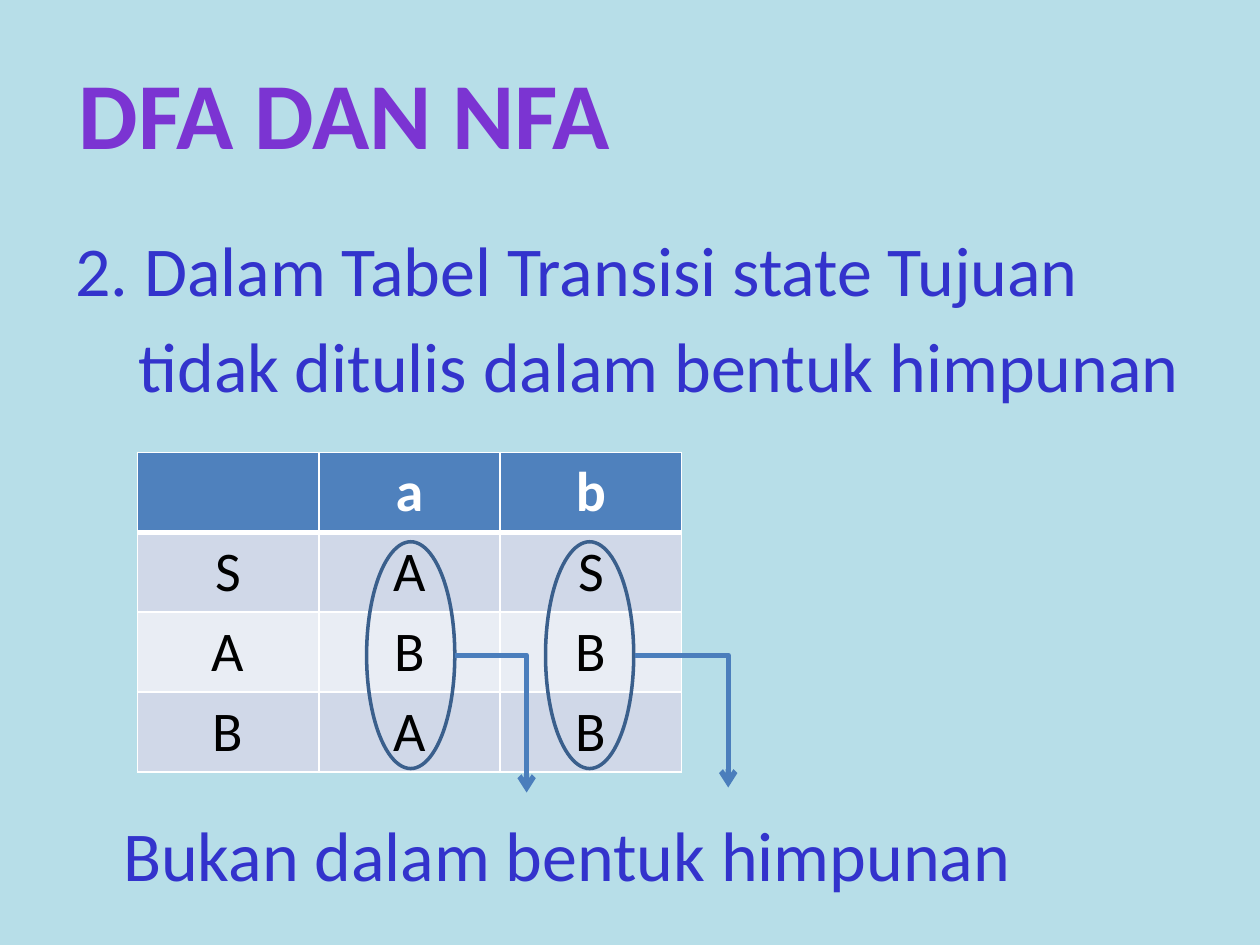
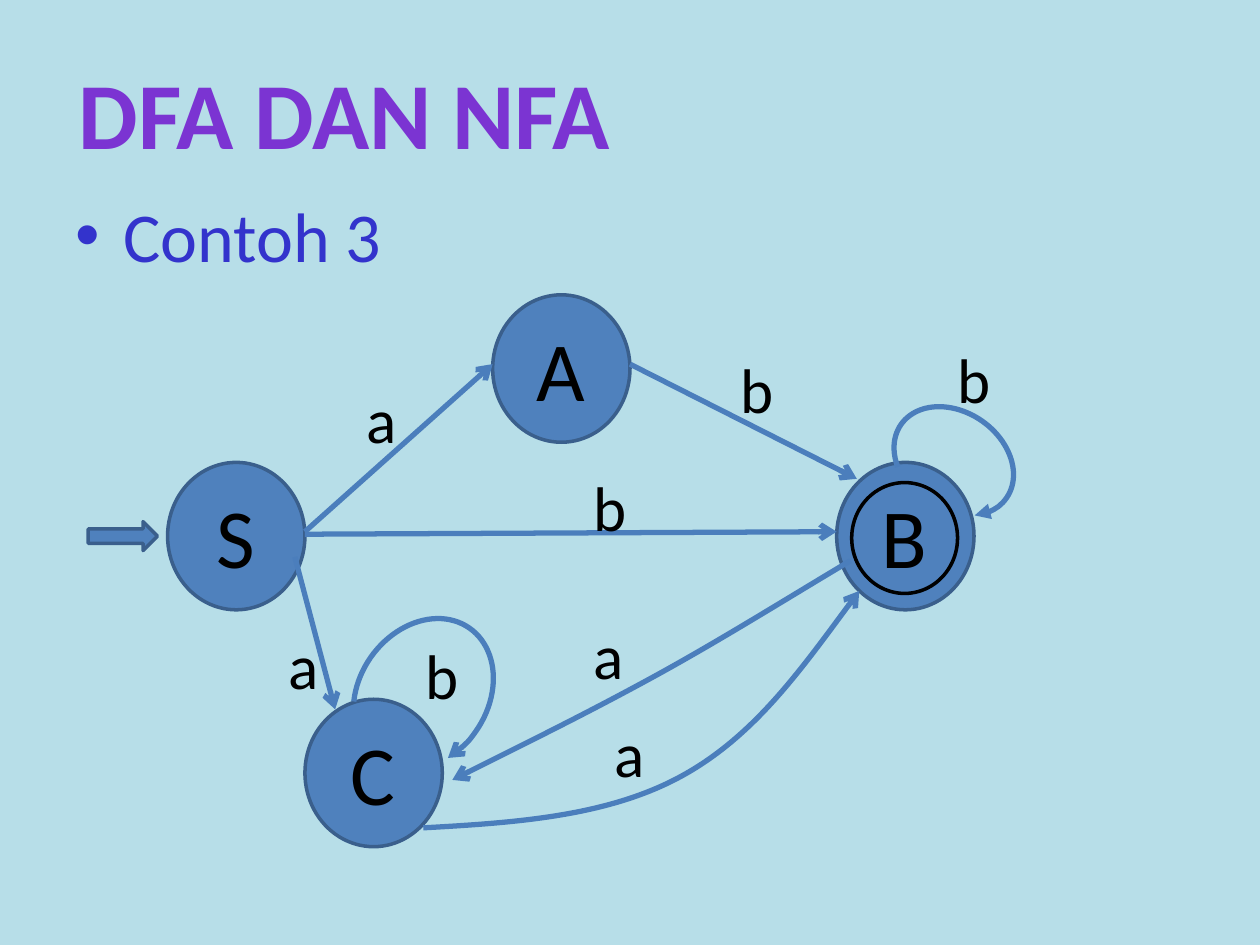
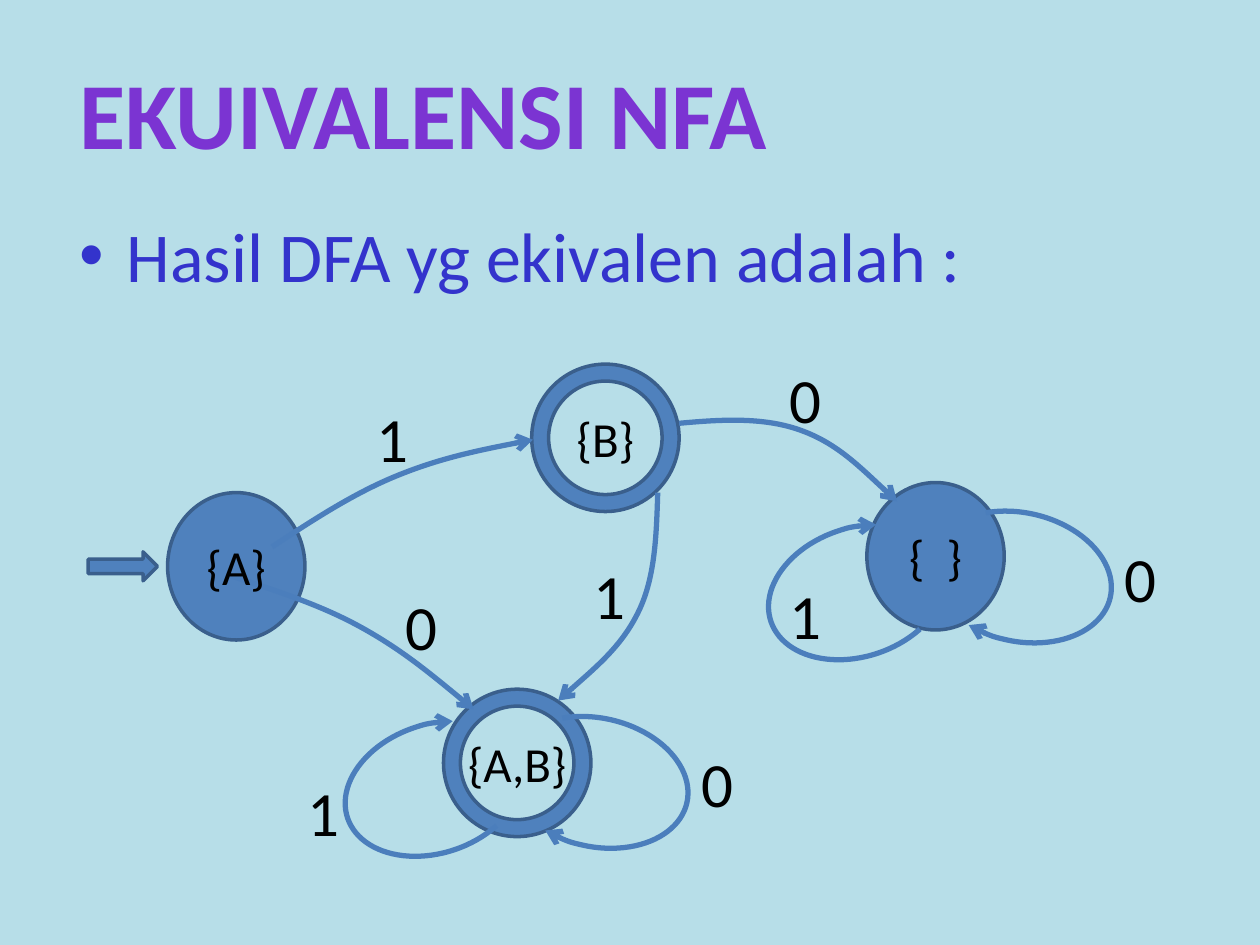
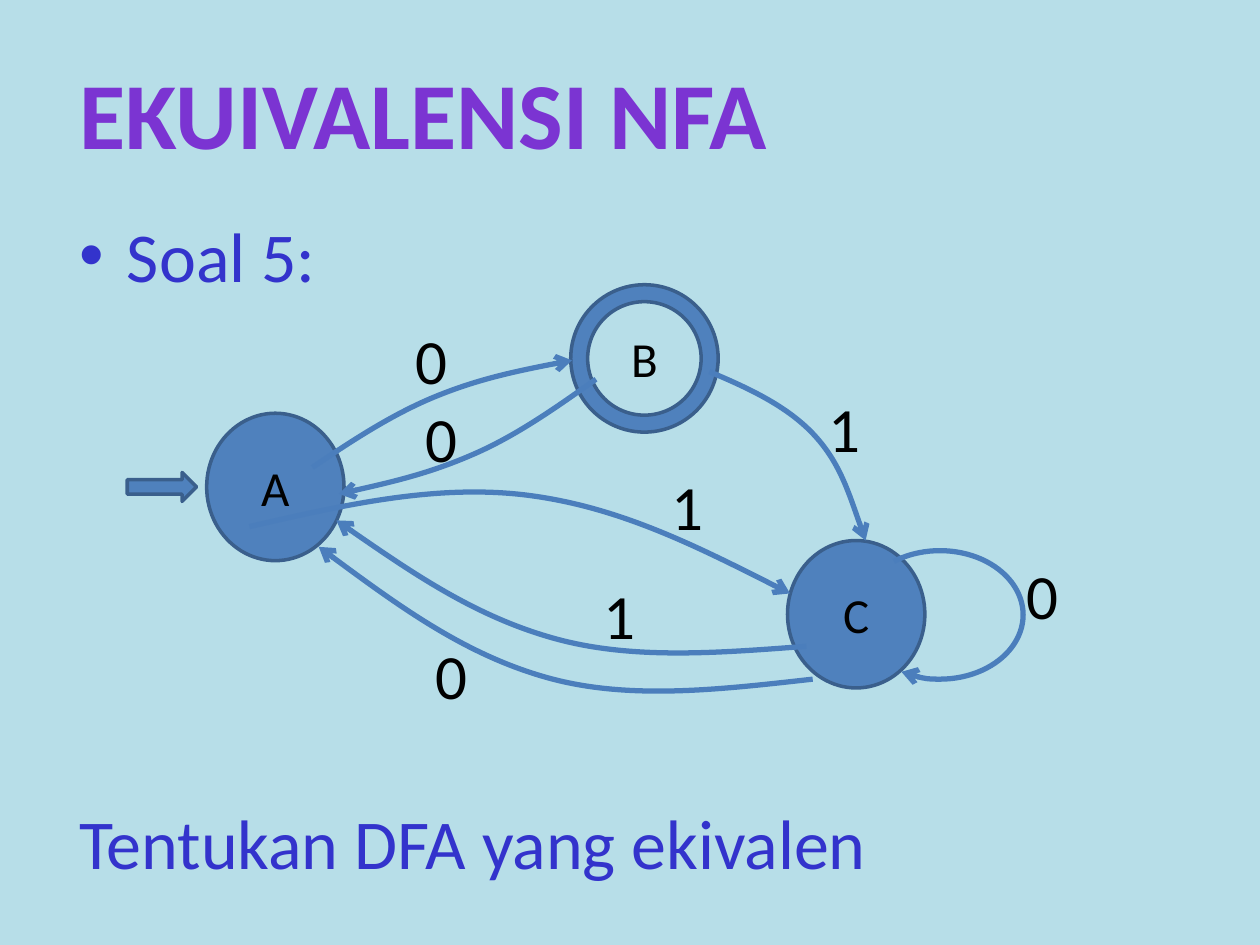
from lxml.etree import SubElement
from pptx import Presentation
from pptx.dml.color import RGBColor
from pptx.enum.shapes import MSO_CONNECTOR, MSO_SHAPE
from pptx.enum.text import MSO_AUTO_SIZE, PP_ALIGN
from pptx.oxml import parse_xml
from pptx.oxml.ns import nsdecls, qn
from pptx.util import Pt

PX = 9144
FONT = "Calibri"
SKY, INDIGO, BLACK, WHITE = "B7DEE8", "3333CC", "000000", "FFFFFF"
BLUE, RIM, STROKE = "4F81BD", "3A5F8C", "4B7EBC"
BANDS = ["D0D8E8", "E9EDF4"]
TITLE_STOPS = [(0, "3D1B67"), (43, "7B34D2"), (48, "7330C4"), (100, "3D1B67")]
TITLE_EDGE = "5E457C"
HANG = 38
LABEL_SIZE = (55, 71)
CIRCLE, RING, ARROW = (109, 117), (117, 117), (55, 23)
ARC_ENDS = (137.545, 74.462)
LEFT_LOOP, RIGHT_LOOP = (145, 102, 161.3, "arrow"), (147, 102, 12.7, "arrow")


def colour(code):
    return RGBColor.from_string(code)


def write(frame, text, size=36, ink=BLACK, bold=False, align=PP_ALIGN.LEFT,
          margin=0, indent=0, bullet=None, before=0, title=False):
    para = frame.add_paragraph() if frame.text else frame.paragraphs[0]
    para.alignment = align
    if before:
        para.space_before = Pt(before)
    properties = para._p.get_or_add_pPr()
    properties.set("marL", str(margin * PX))
    properties.set("indent", str(indent * PX))
    if bullet:
        SubElement(properties, qn("a:buFont")).set("typeface", "Arial")
        SubElement(properties, qn("a:buChar")).set("char", bullet)
    span = para.add_run()
    span.text = text
    span.font.name = FONT
    span.font.size = Pt(size)
    span.font.bold = bold
    if not title:
        span.font.color.rgb = colour(ink)
        return
    stops = "".join(f'<a:gs pos="{place * 1000}"><a:srgbClr val="{code}"/></a:gs>'
                    for place, code in TITLE_STOPS)
    look = span._r.get_or_add_rPr()
    look.insert(0, parse_xml(
        f'<a:gradFill {nsdecls("a")}><a:gsLst>{stops}</a:gsLst>'
        '<a:lin ang="5400000" scaled="0"/></a:gradFill>'))
    look.insert(0, parse_xml(
        f'<a:ln {nsdecls("a")} w="9000"><a:solidFill>'
        f'<a:srgbClr val="{TITLE_EDGE}"/></a:solidFill></a:ln>'))


hanging = dict(margin=HANG, indent=-HANG)
bulleted = dict(hanging, bullet="•")
dfa, equivalence = ("DFA DAN NFA", 447), ("EKUIVALENSI NFA", 572)
big_state, small_state = (48, 78, 91), (28, 99, 57)

slides = [
    dict(
        title=dfa, body_at=(50, 175),
        body=[("2. Dalam Tabel Transisi state Tujuan", hanging),
              ("tidak ditulis dalam bentuk himpunan", dict(margin=50, before=7)),
              ("Bukan dalam bentuk himpunan", dict(margin=HANG, before=231))],
        table=["_ab", "SAS", "ABB", "BAB"],
        outlines=[((left, 430, 70, 180), RIM) for left in (291, 433)],
        elbows=[(504, 520, 578, 625), (361, 520, 418, 629)],
    ),
    dict(
        title=dfa, body_at=(50, 148), body=[("Contoh 3", bulleted)],
        state_text=big_state,
        circles=[("S", 133, 367), ("A", 391, 234), ("B", 664, 367), ("C", 242, 555)],
        outlines=[((676, 383, 84, 88), BLACK)],
        lines=[(242, 422, 391, 289), (242, 424, 664, 422),
               (234, 442, 266, 563), (500, 289, 680, 380)],
        curves=[[(675, 445), (519, 537), (359, 619)],
                [(336, 657), (539, 617), (682, 469)]],
        loops=[(718, 315, 78, 102, 304.8, "triangle"), (272, 500, 128, 102, 304.8, "arrow")],
        labels=[("a", 281, 297), ("a", 461, 484), ("a", 219, 492), ("b", 328, 500),
                ("b", 461, 367), ("b", 750, 265), ("a", 478, 562), ("b", 578, 273)],
    ),
    dict(
        title=equivalence, body_at=(53, 164),
        body=[("Hasil DFA yg ekivalen adalah :", bulleted)],
        state_text=small_state,
        circles=[("{A}", 133, 391), ("{  }", 688, 383)],
        rings=[("{A,B}", 352, 547), ("{B}", 422, 289)],
        curves=[[(522, 391), (507, 485), (443, 556)],
                [(216, 434), (314, 378), (423, 349)],
                [(180, 456), (285, 497), (376, 563)],
                [(539, 336), (634, 341), (712, 398)]],
        loops=[(272, 575, *LEFT_LOOP), (400, 570, *RIGHT_LOOP),
               (608, 419, *LEFT_LOOP), (736, 407, *RIGHT_LOOP)],
        labels=[("1", 289, 312), ("0", 312, 461), ("1", 461, 437), ("1", 234, 609),
                ("0", 547, 586), ("0", 617, 281), ("1", 617, 453), ("0", 883, 423)],
    ),
    dict(
        title=equivalence, body_at=(53, 164),
        body=[("Soal 5:", bulleted),
              ("Tentukan DFA yang ekivalen", dict(hanging, before=287))],
        state_text=small_state,
        circles=[("A", 164, 328), ("C", 625, 429)],
        rings=[("B", 453, 226)],
        curves=[[(248, 371), (345, 315), (454, 286)],
                [(563, 295), (645, 344), (687, 429)],
                [(198, 418), (418, 393), (627, 471)],
                [(640, 513), (441, 507), (267, 413)],
                [(473, 301), (377, 360), (269, 392)],
                [(645, 539), (435, 538), (253, 434)]],
        loops=[(680, 437, 132, 102, 0, "arrow")],
        labels=[("0", 320, 250), ("0", 336, 500), ("1", 469, 453), ("1", 648, 304),
                ("0", 805, 437), ("0", 328, 312), ("1", 523, 366)],
    ),
]

deck = Presentation()
deck.slide_width, deck.slide_height = 1000 * PX, 750 * PX

for content in slides:
    slide = deck.slides.add_slide(deck.slide_layouts[6])
    slide.background.fill.solid()
    slide.background.fill.fore_color.rgb = colour(SKY)
    shapes = slide.shapes

    left, top = content["body_at"]
    box = shapes.add_textbox(left * PX, top * PX, 900 * PX, 547 * PX)
    box.text_frame.word_wrap = True
    for text, look in content["body"]:
        write(box.text_frame, text, size=40, ink=INDIGO, **look)

    title, width = content["title"]
    box = shapes.add_textbox(50 * PX, 39 * PX, width * PX, 101 * PX)
    box.text_frame.word_wrap = False
    box.text_frame.auto_size = MSO_AUTO_SIZE.SHAPE_TO_FIT_TEXT
    write(box.text_frame, title, size=54, bold=True, align=PP_ALIGN.CENTER, title=True)

    if "table" in content:
        grid = shapes.add_table(4, 3, 109 * PX, 359 * PX, 432 * PX, 253 * PX).table
        for row, line in enumerate(content["table"]):
            for column, letter in enumerate(line):
                cell = grid.cell(row, column)
                cell.fill.solid()
                cell.fill.fore_color.rgb = colour(BANDS[(row - 1) % 2] if row else BLUE)
                for place, side in enumerate(["lnL", "lnR", "lnT", "lnB"]):
                    thick = 3 if (row, side) in [(0, "lnB"), (1, "lnT")] else 1
                    cell._tc.get_or_add_tcPr().insert(place, parse_xml(
                        f'<a:{side} {nsdecls("a")} w="{Pt(thick)}"><a:solidFill>'
                        f'<a:srgbClr val="{WHITE}"/></a:solidFill></a:{side}>'))
                if letter != "_":
                    write(cell.text_frame, letter, size=32, bold=row == 0,
                          ink=BLACK if row else WHITE, align=PP_ALIGN.CENTER)

    solids = [(MSO_SHAPE.OVAL, (x, y, *CIRCLE), BLUE, RIM)
              for name, x, y in content.get("circles", [])]
    solids += [(MSO_SHAPE.DONUT, (x, y, *RING), BLUE, RIM)
               for name, x, y in content.get("rings", [])]
    solids += [(MSO_SHAPE.OVAL, place, None, rim) for place, rim in content.get("outlines", [])]
    for name, x, y in content.get("circles", [])[:1]:
        solids.append((MSO_SHAPE.RIGHT_ARROW, (x - 63, y + 47, *ARROW), BLUE, RIM))
    for kind, place, fill, rim in solids:
        shape = shapes.add_shape(kind, *[value * PX for value in place])
        shape.shadow.inherit = False
        if fill:
            shape.fill.solid()
            shape.fill.fore_color.rgb = colour(fill)
        else:
            shape.fill.background()
        shape.line.color.rgb = colour(rim)
        shape.line.width = Pt(2)
        if kind == MSO_SHAPE.DONUT:
            shape.adjustments[0] = 0.115

    strokes = []
    for ends in content.get("lines", []):
        link = shapes.add_connector(MSO_CONNECTOR.STRAIGHT, *[value * PX for value in ends])
        strokes.append((link, "arrow"))
    for ends in content.get("elbows", []):
        link = shapes.add_connector(MSO_CONNECTOR.ELBOW, *[value * PX for value in ends])
        link._element.spPr.find(qn("a:prstGeom")).set("prst", "bentConnector2")
        strokes.append((link, "arrow"))
    for start, middle, end in content.get("curves", []):
        pull = [(b - a) / 6 for a, b in zip(start, end)]
        enter = [m - p for m, p in zip(middle, pull)]
        leave = [m + p for m, p in zip(middle, pull)]
        depart = [(a + b) / 2 for a, b in zip(start, enter)]
        arrive = [(a + b) / 2 for a, b in zip(leave, end)]
        builder = shapes.build_freeform(*start, scale=PX)
        builder.add_line_segments([depart, enter, middle, leave, arrive, end], close=False)
        curve = builder.convert_to_shape()
        curve.fill.background()
        outline = curve._element.find(".//" + qn("a:path"))
        steps = outline.findall(qn("a:lnTo"))
        for half in (steps[:3], steps[3:]):
            bend = SubElement(outline, qn("a:cubicBezTo"))
            for step in half:
                bend.append(step[0])
                outline.remove(step)
        strokes.append((curve, "arrow"))
    for *place, turn, head in content.get("loops", []):
        loop = shapes.add_shape(MSO_SHAPE.ARC, *[value * PX for value in place])
        loop.rotation = turn
        loop.adjustments[0], loop.adjustments[1] = ARC_ENDS
        loop.fill.background()
        strokes.append((loop, head))
    for stroke, head in strokes:
        stroke.line.color.rgb = colour(STROKE)
        stroke.line.width = Pt(3)
        frame = stroke._element.spPr
        SubElement(frame.find(qn("a:ln")), qn("a:tailEnd")).set("type", head)
        SubElement(frame, qn("a:effectLst"))

    words = [(label, (x, y, *LABEL_SIZE), {}) for label, x, y in content.get("labels", [])]
    for group, (across, down) in [("circles", CIRCLE), ("rings", RING)]:
        for name, x, y in content.get(group, []):
            size, width, height = content["state_text"]
            place = (x + (across - width) // 2, y + (down - height) // 2, width, height)
            words.append((name, place, dict(size=size, align=PP_ALIGN.CENTER)))
    for text, place, look in words:
        box = shapes.add_textbox(*[value * PX for value in place])
        box.text_frame.word_wrap = True
        box.text_frame.auto_size = MSO_AUTO_SIZE.SHAPE_TO_FIT_TEXT
        write(box.text_frame, text, **look)

deck.save("out.pptx")
